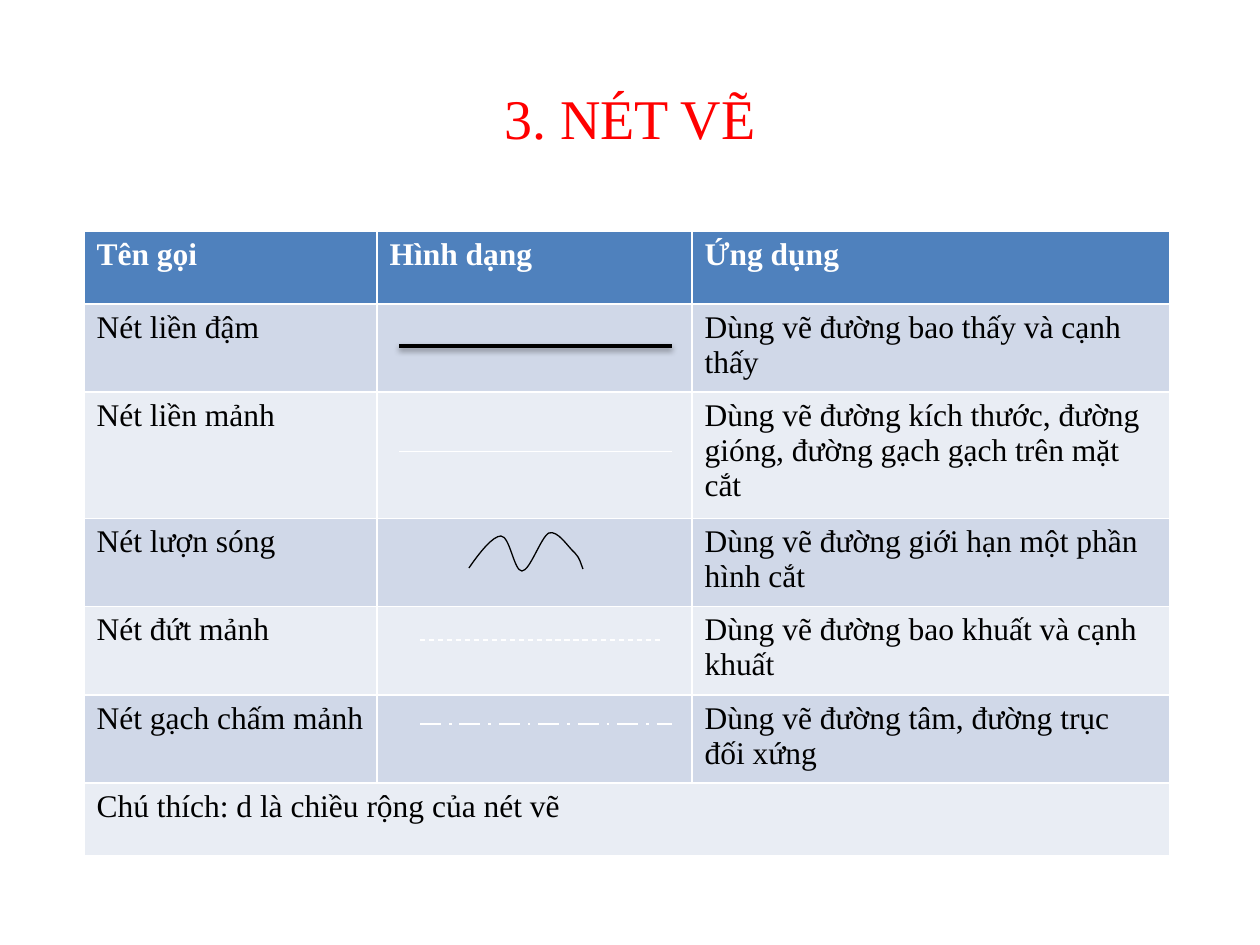
from lxml import etree
from pptx import Presentation
from pptx.dml.color import RGBColor
from pptx.enum.dml import MSO_LINE
from pptx.enum.shapes import MSO_CONNECTOR
from pptx.enum.text import MSO_ANCHOR, PP_ALIGN
from pptx.oxml.ns import qn
from pptx.util import Pt

PX = 914400 / 126
FONT = "Times New Roman"
STRAIGHT = MSO_CONNECTOR.STRAIGHT
DASH, DASH_DOT = MSO_LINE.DASH, MSO_LINE.LONG_DASH_DOT
COLORS = {"title": "FF0000", "header": "4F81BD", "odd": "D0D8E8",
          "even": "E9EDF4", "white": "FFFFFF", "black": "000000"}

TITLE = "3. NÉT VẼ"
ROWS = [
    ("Tên gọi", "Hình dạng", "Ứng dụng"),
    ("Nét liền đậm", "", "Dùng vẽ đường bao thấy và cạnh thấy"),
    ("Nét liền mảnh", "", "Dùng vẽ đường kích thước, đường gióng, đường gạch gạch trên mặt cắt"),
    ("Nét lượn sóng", "", "Dùng vẽ đường giới hạn một phần hình cắt"),
    ("Nét đứt mảnh", "", "Dùng vẽ đường bao khuất và cạnh khuất"),
    ("Nét gạch chấm mảnh", "", "Dùng vẽ đường tâm, đường trục đối xứng"),
    ("Chú thích: d là chiều rộng của nét vẽ", "", ""),
]
COL_WIDTHS = (293, 315, 478)
ROW_HEIGHT = 73
LINES = [
    (399, 672, 346, "black", 2.25, None, True),
    (399, 672, 451, "white", 0.5, None, False),
    (420, 661, 640, "white", 0.75, DASH, False),
    (420, 672, 724, "white", 1.5, DASH_DOT, False),
]
WAVE = [(469, 568),
        (480, 552), (493, 536), (501, 536),
        (510, 536), (514, 571), (522, 571),
        (530, 571), (541, 537), (549, 533),
        (558, 530), (568, 547), (575, 553),
        (580, 558), (581, 564), (583, 569)]


def px(n):
    return round(n * PX)


def rgb(name):
    return RGBColor.from_string(COLORS[name])


def write(p, text, size, color, bold=False):
    r = p.add_run()
    r.text = text
    r.font.name = FONT
    r.font.size = Pt(size)
    r.font.bold = bold
    r.font.color.rgb = rgb(color)


def add_title(slide):
    tf = slide.shapes.add_textbox(px(63), px(38), px(1134), px(158)).text_frame
    tf.word_wrap = True
    tf.vertical_anchor = MSO_ANCHOR.MIDDLE
    p = tf.paragraphs[0]
    p.alignment = PP_ALIGN.CENTER
    write(p, TITLE, 32, "title")


def add_table(slide):
    table = slide.shapes.add_table(
        len(ROWS), len(COL_WIDTHS), px(84), px(231),
        px(sum(COL_WIDTHS)), px(ROW_HEIGHT * len(ROWS))).table
    for col, width in zip(table.columns, COL_WIDTHS):
        col.width = px(width)
    for i, texts in enumerate(ROWS):
        table.rows[i].height = px(ROW_HEIGHT)
        fill = "header" if i == 0 else "odd" if i % 2 else "even"
        for j, text in enumerate(texts):
            cell = table.cell(i, j)
            cell.fill.solid()
            cell.fill.fore_color.rgb = rgb(fill)
            p = cell.text_frame.paragraphs[0]
            p.font.size = Pt(18)
            if text:
                write(p, text, 18, "black" if i else "white", i == 0)
    last = len(ROWS) - 1
    table.cell(last, 0).merge(table.cell(last, len(COL_WIDTHS) - 1))


def add_line(slide, x1, x2, y, color, width, dash, shadow):
    line = slide.shapes.add_connector(STRAIGHT, px(x1), px(y), px(x2), px(y))
    line.line.color.rgb = rgb(color)
    line.line.width = Pt(width)
    if dash:
        line.line.dash_style = dash
    effects = etree.SubElement(line._element.spPr, qn("a:effectLst"))
    if shadow:
        outer = etree.SubElement(effects, qn("a:outerShdw"), blurRad="40000",
                                 dist="20000", dir="5400000", rotWithShape="0")
        clr = etree.SubElement(outer, qn("a:srgbClr"), val=COLORS["black"])
        etree.SubElement(clr, qn("a:alpha"), val="38000")


def add_wave(slide):
    builder = slide.shapes.build_freeform(*WAVE[0], scale=PX)
    builder.add_line_segments(WAVE[1:], close=False)
    sp = builder.convert_to_shape()
    sp.shadow.inherit = False
    sp.fill.background()
    sp.line.color.rgb = rgb("black")
    sp.line.width = Pt(0.75)
    outline = next(sp._element.iter(qn("a:path")))
    segments = outline.findall(qn("a:lnTo"))
    for k in range(0, len(segments), 3):
        curve = etree.SubElement(outline, qn("a:cubicBezTo"))
        for seg in segments[k:k + 3]:
            curve.append(seg[0])
            outline.remove(seg)


def main():
    prs = Presentation()
    prs.slide_width, prs.slide_height = px(1260), px(945)
    slide = prs.slides.add_slide(prs.slide_layouts[6])
    add_title(slide)
    add_table(slide)
    for line in LINES[:2]:
        add_line(slide, *line)
    add_wave(slide)
    for line in LINES[2:]:
        add_line(slide, *line)
    prs.save("out.pptx")


if __name__ == "__main__":
    main()
